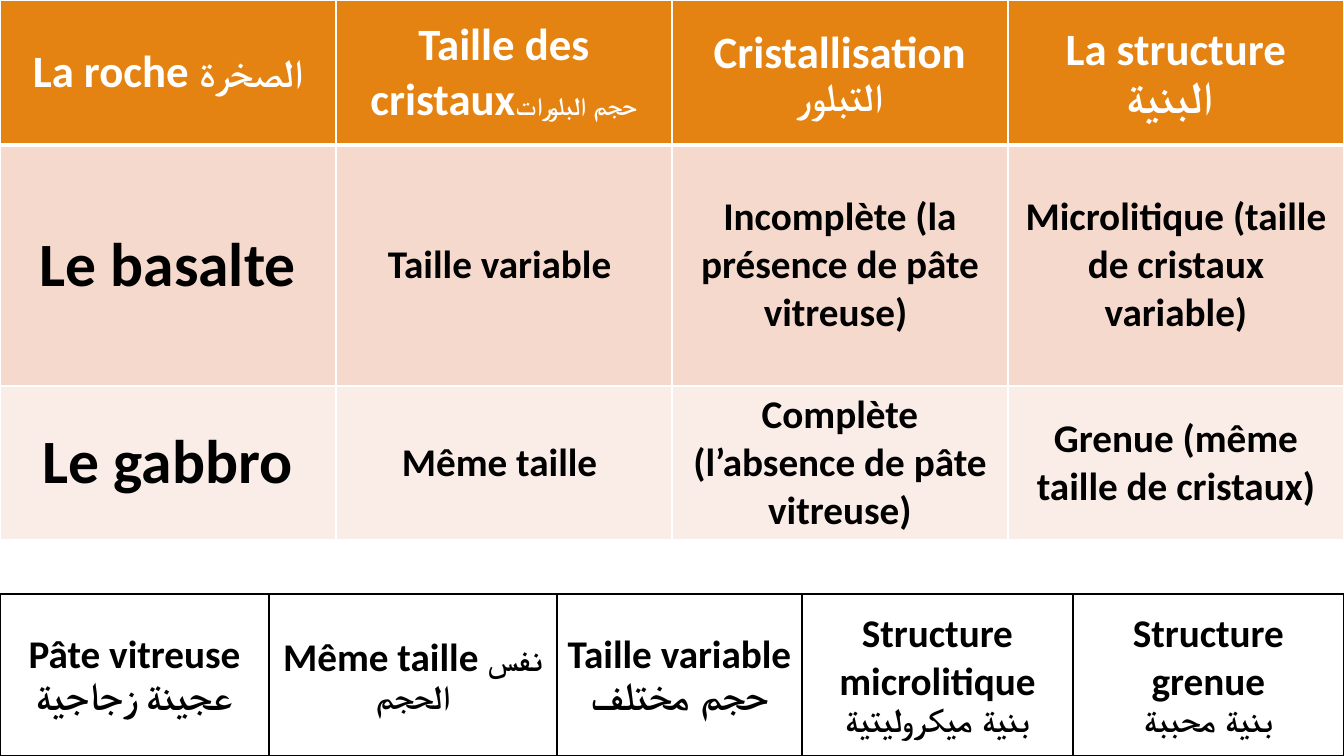
import pptx
import pptx.dml.color
import pptx.enum.text
import pptx.oxml
import pptx.oxml.ns
import pptx.util

RGBColor = pptx.dml.color.RGBColor
WHITE = RGBColor(0xFF, 0xFF, 0xFF)
BLACK = RGBColor(0x00, 0x00, 0x00)
ORANGE = RGBColor(0xE4, 0x83, 0x12)
ROSE = RGBColor(0xF5, 0xD9, 0xCC)
PALE_ROSE = RGBColor(0xFA, 0xED, 0xE7)

FONT = "Calibri"
SLIDE_WIDTH, SLIDE_HEIGHT = 1344, 756
EMU_PER_PX = 914400 / 100.8

# Each cell is a list of paragraphs, each paragraph a list of (text, size) runs.
ROCK_HEADINGS = [
    [[("La roche ", 32), ("الصخرة", 28)]],
    [[("Taille des cristaux", 32), ("حجم البلورات", 18)]],
    [[("Cristallisation ", 32), ("التبلور", 28)]],
    [[("La structure", 32)], [("البنية ", 32)]],
]
BASALT = [
    [[("Le basalte", 44)]],
    [[("Taille variable ", 28)]],
    [[("Incomplète (la présence de pâte vitreuse) ", 28)]],
    [[("Microlitique (taille de cristaux variable)", 28)]],
]
GABBRO = [
    [[("Le gabbro", 44)]],
    [[("Même taille ", 28)]],
    [[("Complète (l’absence de pâte vitreuse)", 28)]],
    [[("Grenue (même taille de cristaux)", 28)]],
]
GLOSSARY = [
    [[("Pâte vitreuse", 28)], [("عجينة زجاجية", 28)]],
    [[("Même taille ", 28), ("نفس الحجم", 24)]],
    [[("Taille variable", 28)], [("حجم مختلف", 28)]],
    [[("Structure microlitique", 28)], [("بنية ميكروليتية", 24)]],
    [[("Structure grenue", 28)], [("بنية محببة", 24)]],
]


def px(length):
    return pptx.util.Emu(round(length * EMU_PER_PX))


def set_borders(cell, color, top=1, bottom=1):
    """Draw the four cell borders, widths in points; call before filling."""
    properties = cell._tc.get_or_add_tcPr()
    for side, width in (("L", 1), ("R", 1), ("T", top), ("B", bottom)):
        properties.append(pptx.oxml.parse_xml(
            f'<a:ln{side} {pptx.oxml.ns.nsdecls("a")} w="{pptx.util.Pt(width)}">'
            f'<a:solidFill><a:srgbClr val="{color}"/></a:solidFill></a:ln{side}>'))


def write_cell(cell, paragraphs, fill, color):
    cell.fill.solid()
    cell.fill.fore_color.rgb = fill
    cell.vertical_anchor = pptx.enum.text.MSO_ANCHOR.MIDDLE
    frame = cell.text_frame
    for index, runs in enumerate(paragraphs):
        paragraph = frame.add_paragraph() if index else frame.paragraphs[0]
        paragraph.alignment = pptx.enum.text.PP_ALIGN.CENTER
        for text, size in runs:
            run = paragraph.add_run()
            run.text = text
            run.font.name = FONT
            run.font.size = pptx.util.Pt(size)
            run.font.bold = True
            run.font.color.rgb = color


def add_grid(slide, left, top, widths, heights):
    grid = slide.shapes.add_table(
        len(heights), len(widths), px(left), px(top),
        px(sum(widths)), px(sum(heights))).table
    grid.horz_banding = False
    for column, width in zip(grid.columns, widths):
        column.width = px(width)
    for row, height in zip(grid.rows, heights):
        row.height = px(height)
    return grid


def add_rock_comparison(slide, left, top, width):
    rows = [
        (ROCK_HEADINGS, ORANGE, WHITE, 145),
        (BASALT, ROSE, BLACK, 241),
        (GABBRO, PALE_ROSE, BLACK, 152),
    ]
    columns = len(ROCK_HEADINGS)
    grid = add_grid(slide, left, top, [width // columns] * columns,
                    [height for *_, height in rows])
    for index, (contents, fill, color, _) in enumerate(rows):
        for cell, paragraphs in zip(grid.rows[index].cells, contents):
            set_borders(cell, WHITE, top=3 if index == 1 else 1,
                        bottom=3 if index == 0 else 1)
            write_cell(cell, paragraphs, fill, color)


def add_glossary(slide, left, top, widths, height):
    grid = add_grid(slide, left, top, widths, [height])
    grid.first_row = False
    for cell, paragraphs in zip(grid.rows[0].cells, GLOSSARY):
        set_borders(cell, BLACK)
        write_cell(cell, paragraphs, WHITE, BLACK)


def main():
    presentation = pptx.Presentation()
    presentation.slide_width = px(SLIDE_WIDTH)
    presentation.slide_height = px(SLIDE_HEIGHT)
    slide = presentation.slides.add_slide(presentation.slide_layouts[6])
    add_rock_comparison(slide, 0, 0, SLIDE_WIDTH)
    glossary_height = 162
    add_glossary(slide, 0, SLIDE_HEIGHT - glossary_height,
                 [269, 288, 245, 271, 271], glossary_height)
    presentation.save("out.pptx")


if __name__ == "__main__":
    main()
